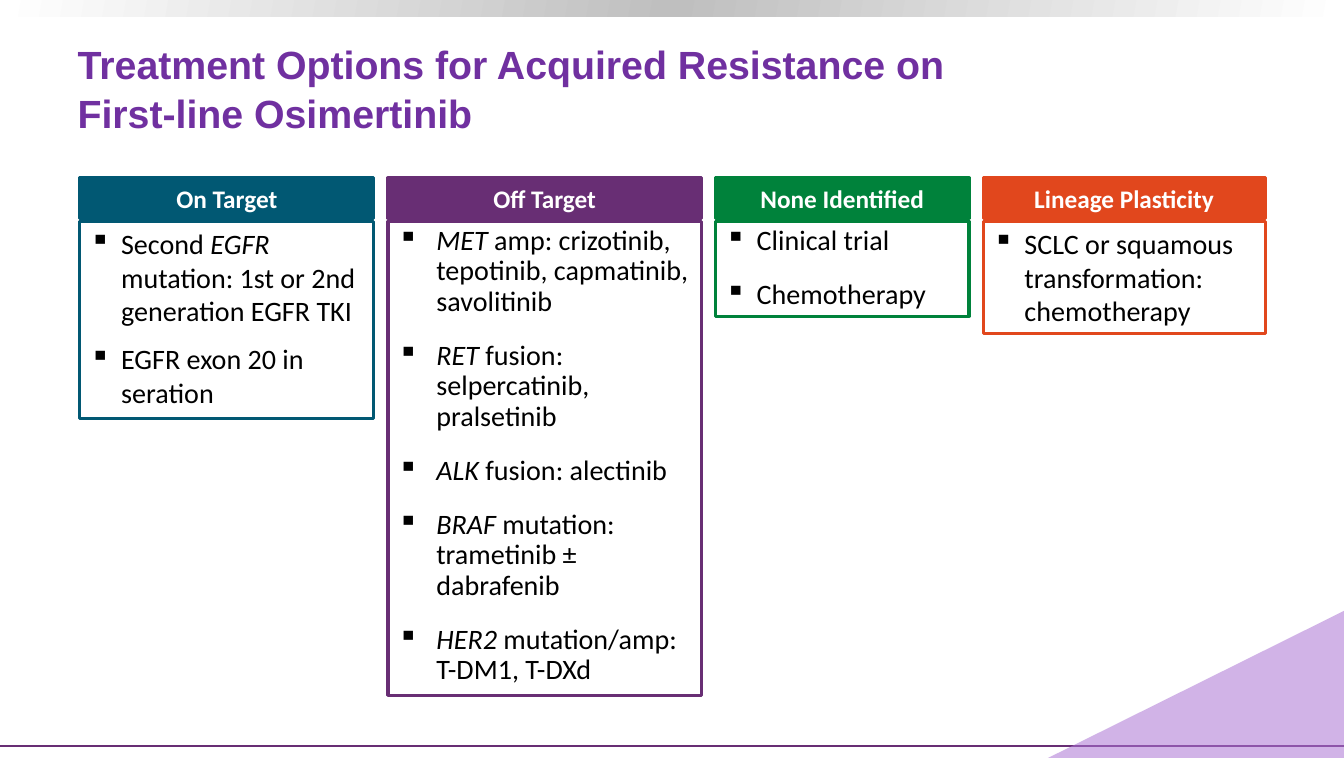
from copy import deepcopy
from dataclasses import dataclass

from lxml import etree
from pptx import Presentation
from pptx.dml.color import RGBColor
from pptx.enum.shapes import MSO_CONNECTOR, MSO_SHAPE
from pptx.enum.text import MSO_ANCHOR, PP_ALIGN
from pptx.oxml.ns import qn
from pptx.shapes.autoshape import Shape
from pptx.slide import Slide
from pptx.text.text import _Paragraph as Para
from pptx.util import Inches, Pt

RECT = MSO_SHAPE.RECTANGLE
STRAIGHT = MSO_CONNECTOR.STRAIGHT
MIDDLE, TOP = MSO_ANCHOR.MIDDLE, MSO_ANCHOR.TOP
LEFT, CENTER = PP_ALIGN.LEFT, PP_ALIGN.CENTER


@dataclass(frozen=True)
class Theme:
    title: str = "7030A0"
    white: str = "FFFFFF"
    black: str = "000000"
    gray: str = "BFBFBF"
    teal: str = "015873"
    plum: str = "682E74"
    green: str = "00823B"
    orange: str = "E1471D"
    lilac: str = "AC75D5"
    alpha: int = 55
    head_font: str = "Arial"
    body_font: str = "Calibri"
    title_size: int = 28
    label_size: int = 18
    body_size: int = 20
    frame: float = 2.25
    rule: float = 1.5


@dataclass(frozen=True)
class Column:
    label: str
    color: str
    width: float
    height: float
    items: tuple[str, ...]
    indent: float = 0.31
    tight: bool = False


THEME = Theme()
WIDTH, HEIGHT = 13.3, 7.5
START, GAP = 0.79, 0.14
LABEL_TOP, LABEL_HIGH, BODY_TOP = 1.76, 0.4, 2.19
TITLE = ("Treatment Options for Acquired Resistance on", "First-line Osimertinib")
CORNER = ((10.03, 7.67), (10.03, 8.13), (13.33, 8.13), (13.33, 6.03))
COLUMNS = (
    Column("On Target", THEME.teal, 2.91, 1.95, (
        "Second *EGFR* mutation: 1st or 2nd generation EGFR TKI",
        "EGFR exon 20 in seration",
    )),
    Column("Off Target", THEME.plum, 3.1, 4.69, (
        "*MET* amp: crizotinib, tepotinib, capmatinib, savolitinib",
        "*RET* fusion: selpercatinib, pralsetinib",
        "*ALK* fusion: alectinib",
        "*BRAF* mutation: trametinib ± dabrafenib",
        "*HER2* mutation/amp: T-DM1, T-DXd",
    ), indent=0.38, tight=True),
    Column("None Identified", THEME.green, 2.51, 0.94,
           ("Clinical trial", "Chemotherapy"), tight=True),
    Column("Lineage Plasticity", THEME.orange, 2.79, 1.11,
           ("SCLC or squamous transformation: chemotherapy",)),
)


def rgb(color: str) -> RGBColor:
    return RGBColor.from_string(color)


def style(para: Para, face: str, size: int, color: str, bold: bool = False) -> None:
    font = para.font
    font.name, font.size, font.bold = face, Pt(size), bold
    font.color.rgb = rgb(color)


def add_bar(slide: Slide) -> None:
    bar = slide.shapes.add_shape(RECT, 0, 0, Inches(WIDTH), Inches(0.16))
    bar.shadow.inherit = False
    bar.line.fill.background()
    bar.fill.gradient()
    bar.fill.gradient_angle = 170
    stops = bar.element.spPr.find(".//" + qn("a:gsLst"))
    stops.append(deepcopy(stops[-1]))
    colors = (THEME.white, THEME.gray, THEME.white)
    for stop, color, place in zip(bar.fill.gradient_stops, colors, (0, 0.5, 1)):
        stop.color.rgb = rgb(color)
        stop.position = place


def add_rule(slide: Slide) -> None:
    level = Inches(7.38)
    rule = slide.shapes.add_connector(STRAIGHT, 0, level, Inches(WIDTH), level)
    rule.line.color.rgb = rgb(THEME.plum)
    rule.line.width = Pt(THEME.rule)
    etree.SubElement(rule.element.spPr, qn("a:effectLst"))


def add_title(slide: Slide) -> None:
    box = slide.shapes.add_textbox(
        Inches(0.67), Inches(0.26), Inches(11.86), Inches(1.21))
    frame = box.text_frame
    frame.word_wrap = True
    frame.vertical_anchor = MIDDLE
    para = frame.paragraphs[0]
    para.line_spacing = 1.04
    para.add_run().text = TITLE[0]
    para.add_line_break()
    para.add_run().text = TITLE[1]
    style(para, THEME.head_font, THEME.title_size, THEME.title, True)


def add_item(para: Para, item: str, column: Column) -> None:
    para.alignment = LEFT
    props = para._p.get_or_add_pPr()
    indent = Inches(column.indent)
    props.set("marL", str(indent))
    props.set("indent", str(-indent))
    etree.SubElement(props, qn("a:buChar")).set("char", "▪")
    para.space_before = Pt(10)
    if column.tight:
        para.line_spacing = 0.9
        para.space_after = Pt(7)
    style(para, THEME.body_font, THEME.body_size, THEME.black)
    for index, part in enumerate(item.split("*")):
        if part:
            run = para.add_run()
            run.text = part
            if index % 2:
                run.font.italic = True


def add_column(slide: Slide, column: Column, left: float) -> None:
    group = slide.shapes.add_group_shape()

    def add_box(top: float, high: float) -> Shape:
        box = group.shapes.add_shape(
            RECT, Inches(left), Inches(top), Inches(column.width), Inches(high))
        box.shadow.inherit = False
        box.line.color.rgb = rgb(column.color)
        box.line.width = Pt(THEME.frame)
        box.text_frame.word_wrap = True
        box.text_frame.vertical_anchor = TOP
        return box

    label = add_box(LABEL_TOP, LABEL_HIGH)
    label.fill.solid()
    label.fill.fore_color.rgb = rgb(column.color)
    para = label.text_frame.paragraphs[0]
    para.alignment = CENTER
    para.text = column.label
    style(para, THEME.body_font, THEME.label_size, THEME.white, True)

    body = add_box(BODY_TOP, column.height)
    body.fill.background()
    frame = body.text_frame
    for index, item in enumerate(column.items):
        para = frame.add_paragraph() if index else frame.paragraphs[0]
        add_item(para, item, column)


def add_corner(slide: Slide) -> None:
    first, *rest = [(Inches(x), Inches(y)) for x, y in CORNER]
    form = slide.shapes.build_freeform(*first)
    form.add_line_segments(rest, close=True)
    corner = form.convert_to_shape()
    corner.shadow.inherit = False
    corner.line.fill.background()
    corner.fill.solid()
    corner.fill.fore_color.rgb = rgb(THEME.lilac)
    color = corner.element.spPr.find(".//" + qn("a:srgbClr"))
    etree.SubElement(color, qn("a:alpha")).set("val", str(THEME.alpha * 1000))


def main() -> None:
    """Build the slide of treatment options and save it."""
    deck = Presentation()
    deck.slide_width, deck.slide_height = Inches(WIDTH), Inches(HEIGHT)
    slide = deck.slides.add_slide(deck.slide_layouts[6])
    add_bar(slide)
    add_rule(slide)
    add_title(slide)
    left = START
    for column in COLUMNS:
        add_column(slide, column, left)
        left += column.width + GAP
    add_corner(slide)
    deck.save("out.pptx")


if __name__ == "__main__":
    main()
